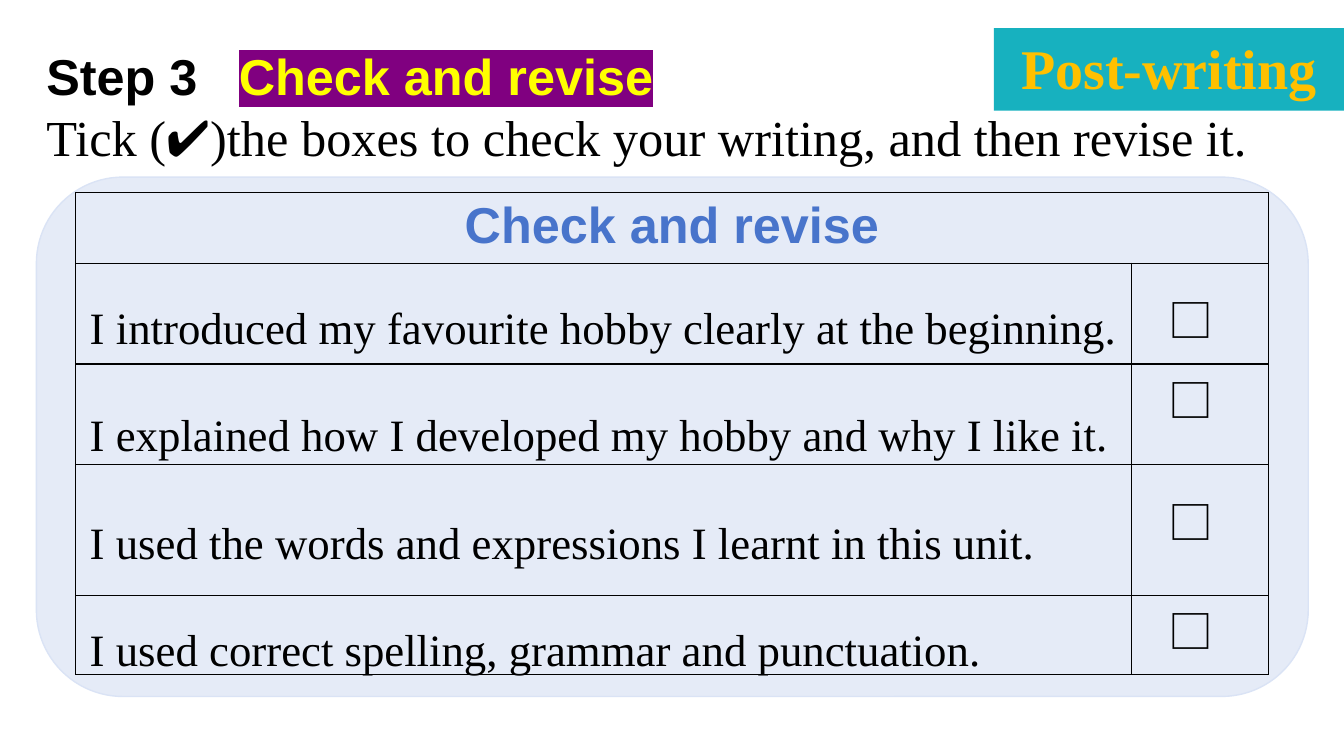
"""Build the "Check and revise" self-assessment slide."""
from dataclasses import dataclass

from pptx import Presentation
from pptx import util as u
from pptx.dml.color import RGBColor
from pptx.enum import shapes, text
from pptx.oxml import ns, xmlchemy

Pt = u.Pt


@dataclass(frozen=True)
class Theme:
    black: str = "000000"
    panel: str = "DAE3F5"
    panel_alpha: int = 70000
    banner: str = "17B1BF"
    gold: str = "FFC000"
    yellow: str = "FFFF00"
    purple: str = "800080"
    blue: str = "4874CB"
    sans: str = "Arial"
    serif: str = "Times New Roman"
    symbol: str = "Noto Sans CJK SC"
    body: int = 32
    title: int = 36
    label: int = 40


@dataclass(frozen=True)
class Frame:
    left: float
    top: float
    width: float
    height: float

    def points(self) -> tuple:
        return tuple(Pt(v) for v in (self.left, self.top, self.width, self.height))


@dataclass(frozen=True)
class Span:
    words: str
    font: str
    size: int
    color: str
    bold: bool = False
    highlight: str = ""


@dataclass(frozen=True)
class Check:
    statement: str
    row_height: float
    tick_top: float


THEME = Theme()
TITLE_ROW = 50.5
COLUMNS = (754, 98)
TICK_LEFT, TICK_WIDTH, TICK_HEIGHT = 835, 40, 46
TITLE_TAB = 137.5
CHECKS = (
    Check("I introduced my favourite hobby clearly at the beginning.", 72, 209),
    Check("I explained how I developed my hobby and why I like it.", 72, 266),
    Check("I used the words and expressions I learnt in this unit.", 93.5, 353),
    Check("I used correct spelling, grammar and punctuation.", 56.5, 431),
)


def element(parent, tag: str, **attributes):
    """Append a child element with the given attributes."""
    child = xmlchemy.OxmlElement(tag)
    for name, value in attributes.items():
        child.set(name, str(value))
    parent.append(child)
    return child


def write(para, *spans: Span) -> None:
    """Add styled runs to a paragraph."""
    for span in spans:
        run = para.add_run()
        run.text = span.words
        font = run.font
        font.size, font.bold, font.name = Pt(span.size), span.bold, span.font
        font.color.rgb = RGBColor.from_string(span.color)
        properties = run._r.get_or_add_rPr()
        element(properties, "a:ea", typeface=span.font)
        if span.highlight:
            mark = xmlchemy.OxmlElement("a:highlight")
            element(mark, "a:srgbClr", val=span.highlight)
            properties.find(ns.qn("a:solidFill")).addnext(mark)


def add_panel(page, kind, frame: Frame, fill: str, line: str = ""):
    """Add a filled preset shape with an optional thin outline."""
    shape = page.shapes.add_shape(kind, *frame.points())
    shape.shadow.inherit = False
    shape.fill.solid()
    shape.fill.fore_color.rgb = RGBColor.from_string(fill)
    if line:
        shape.line.color.rgb = RGBColor.from_string(line)
        shape.line.width = Pt(1)
    else:
        shape.line.fill.background()
    return shape


def add_text_frame(page, frame: Frame):
    """Add a wrapping text box and return its text frame."""
    box = page.shapes.add_textbox(*frame.points()).text_frame
    box.word_wrap = True
    return box


def add_tick(page, top: float) -> None:
    """Add an empty tick square."""
    box = add_text_frame(page, Frame(TICK_LEFT, top, TICK_WIDTH, TICK_HEIGHT))
    box.margin_left = box.margin_right = box.margin_top = box.margin_bottom = Pt(0)
    write(box.paragraphs[0], Span("□", THEME.symbol, THEME.body, THEME.black))


def style_cell(cell) -> None:
    """Clear the cell fill and draw thin borders."""
    properties = cell._tc.get_or_add_tcPr()
    for side in ("a:lnL", "a:lnR", "a:lnT", "a:lnB"):
        border = element(properties, side, w=Pt(1))
        element(element(border, "a:solidFill"), "a:srgbClr", val=THEME.black)
    cell.fill.background()


def add_checklist(page) -> None:
    """Add the ruled table, its statements and the tick squares."""
    heights = [TITLE_ROW] + [check.row_height for check in CHECKS]
    frame = Frame(54, 137.5, sum(COLUMNS), sum(heights))
    table = page.shapes.add_table(len(heights), len(COLUMNS), *frame.points()).table
    table.first_row = table.horz_banding = False
    for column, width in zip(table.columns, COLUMNS):
        column.width = Pt(width)
    for row, height in zip(table.rows, heights):
        row.height = Pt(height)
        for cell in row.cells:
            style_cell(cell)
    heading = table.cell(0, 0)
    heading.merge(table.cell(0, 1))
    para = heading.text_frame.paragraphs[0]
    para.alignment = text.PP_ALIGN.CENTER
    write(para, Span("Check and revise", THEME.sans, THEME.title, THEME.blue, True))

    box = add_text_frame(page, Frame(57, 172, COLUMNS[0], 317.5))
    for index, check in enumerate(CHECKS):
        para = box.add_paragraph() if index else box.paragraphs[0]
        para.line_spacing = 2.0
        write(para, Span(check.statement, THEME.serif, THEME.body, THEME.black))
        add_tick(page, check.tick_top)


def add_banner(page) -> None:
    """Add the stage label in the top right corner."""
    banner = add_panel(page, shapes.MSO_SHAPE.RECTANGLE, Frame(710, 20, 250, 59), THEME.banner)
    banner.text_frame.vertical_anchor = text.MSO_ANCHOR.MIDDLE
    banner.text_frame.margin_bottom = Pt(6.5)
    para = banner.text_frame.paragraphs[0]
    para.alignment = text.PP_ALIGN.CENTER
    write(para, Span("Post-writing", THEME.serif, THEME.label, THEME.gold, True))


def add_instructions(page) -> None:
    """Add the step title and the task sentence."""
    box = add_text_frame(page, Frame(26, 29, 908.5, 97))
    box.vertical_anchor = text.MSO_ANCHOR.TOP
    title, task = box.paragraphs[0], box.add_paragraph()
    title.alignment = task.alignment = text.PP_ALIGN.JUSTIFY
    stops = element(title._p.get_or_add_pPr(), "a:tabLst")
    element(stops, "a:tab", pos=Pt(TITLE_TAB), algn="l")
    size, black = THEME.title, THEME.black
    write(
        title,
        Span("Step 3\t", THEME.sans, size, black, True),
        Span("Check and revise", THEME.sans, size, THEME.yellow, True, THEME.purple),
    )
    write(
        task,
        Span("Tick (", THEME.serif, size, black),
        Span("✔", THEME.symbol, size, black),
        Span(")the boxes to check your writing, and then revise it.", THEME.serif, size, black),
    )


def main() -> None:
    """Create the deck and save it."""
    deck = Presentation()
    deck.slide_width, deck.slide_height = Pt(960), Pt(540)
    page = deck.slides.add_slide(deck.slide_layouts[6])
    panel = add_panel(page, shapes.MSO_SHAPE.ROUNDED_RECTANGLE,
                      Frame(26, 126.5, 908.5, 371), THEME.panel, THEME.panel)
    color = panel._element.spPr.find(ns.qn("a:solidFill"))[0]
    element(color, "a:alpha", val=THEME.panel_alpha)
    add_checklist(page)
    add_banner(page)
    add_instructions(page)
    deck.save("out.pptx")


if __name__ == "__main__":
    main()
